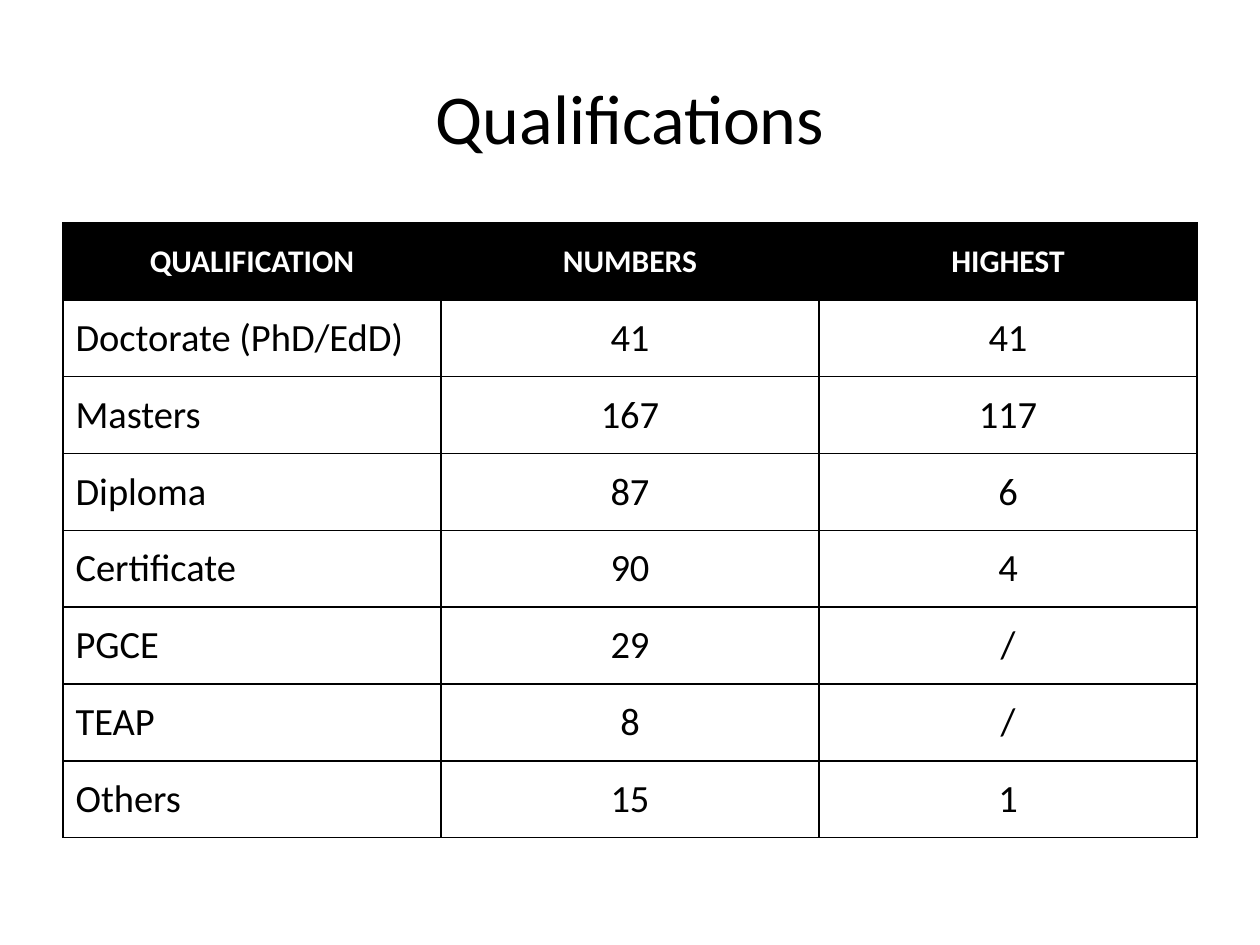
"""Build the Qualifications slide with its table of staff qualifications."""
from dataclasses import dataclass

import lxml.etree
import pptx
import pptx.dml.color
import pptx.enum.text
import pptx.oxml.ns
import pptx.util
from pptx.util import Inches

ALIGN = pptx.enum.text.PP_ALIGN
MIDDLE = pptx.enum.text.MSO_ANCHOR.MIDDLE


@dataclass(frozen=True)
class Theme:
    font: str = "Calibri"
    ink: str = "000000"
    paper: str = "FFFFFF"
    title_size: float = 40
    heading_size: float = 18
    body_size: float = 22
    rule_width: float = 1


@dataclass(frozen=True)
class Qualification:
    label: str
    numbers: str
    highest: str

    def entries(self) -> tuple[str, str, str]:
        return self.label, self.numbers, self.highest


THEME = Theme()
HEADINGS = Qualification("QUALIFICATION", "NUMBERS", "HIGHEST")
QUALIFICATIONS = [
    Qualification("Doctorate (PhD/EdD)", "41", "41"),
    Qualification("Masters", "167", "117"),
    Qualification("Diploma", "87", "6"),
    Qualification("Certificate", "90", "4"),
    Qualification("PGCE", "29", "/"),
    Qualification("TEAP", "8", "/"),
    Qualification("Others", "15", "1"),
]


def write_text(frame, text: str, size: float, color: str, align, bold: bool = False) -> None:
    frame.text = text
    paragraph = frame.paragraphs[0]
    paragraph.alignment = align
    font = paragraph.runs[0].font
    font.name = THEME.font
    font.size = pptx.util.Pt(size)
    font.bold = bold
    font.color.rgb = pptx.dml.color.RGBColor.from_string(color)


def rule_cell(cell) -> None:
    qn = pptx.oxml.ns.qn
    properties = cell._tc.get_or_add_tcPr()
    for position, side in enumerate(("a:lnL", "a:lnR", "a:lnT", "a:lnB")):
        rule = lxml.etree.Element(qn(side), w=str(pptx.util.Pt(THEME.rule_width)))
        fill = lxml.etree.SubElement(rule, qn("a:solidFill"))
        lxml.etree.SubElement(fill, qn("a:srgbClr"), val=THEME.ink)
        properties.insert(position, rule)


def fill_row(cells, qualification: Qualification, is_heading: bool) -> None:
    background, color = (THEME.ink, THEME.paper) if is_heading else (THEME.paper, THEME.ink)
    size = THEME.heading_size if is_heading else THEME.body_size
    for column, (cell, entry) in enumerate(zip(cells, qualification.entries())):
        align = ALIGN.CENTER if is_heading or column else ALIGN.LEFT
        write_text(cell.text_frame, entry, size, color, align, is_heading)
        cell.vertical_anchor = MIDDLE
        cell.fill.solid()
        cell.fill.fore_color.rgb = pptx.dml.color.RGBColor.from_string(background)
        rule_cell(cell)


def add_title(slide, text: str) -> None:
    title = slide.shapes.title
    title.left, title.top = Inches(0.5), Inches(0.3)
    title.width, title.height = Inches(9), Inches(1.25)
    write_text(title.text_frame, text, THEME.title_size, THEME.ink, ALIGN.CENTER)
    title.text_frame.vertical_anchor = MIDDLE


def add_qualifications(slide, records: list[Qualification]) -> None:
    table = slide.shapes.add_table(
        len(records), len(HEADINGS.entries()),
        Inches(0.5), Inches(1.77), Inches(9), Inches(4.88),
    ).table
    for index, (row, record) in enumerate(zip(table.rows, records)):
        fill_row(row.cells, record, index == 0)


def main() -> None:
    presentation = pptx.Presentation()
    presentation.slide_width, presentation.slide_height = Inches(10), Inches(7.5)
    slide = presentation.slides.add_slide(presentation.slide_layouts[5])
    add_title(slide, "Qualifications")
    add_qualifications(slide, [HEADINGS, *QUALIFICATIONS])
    presentation.save("out.pptx")


if __name__ == "__main__":
    main()
